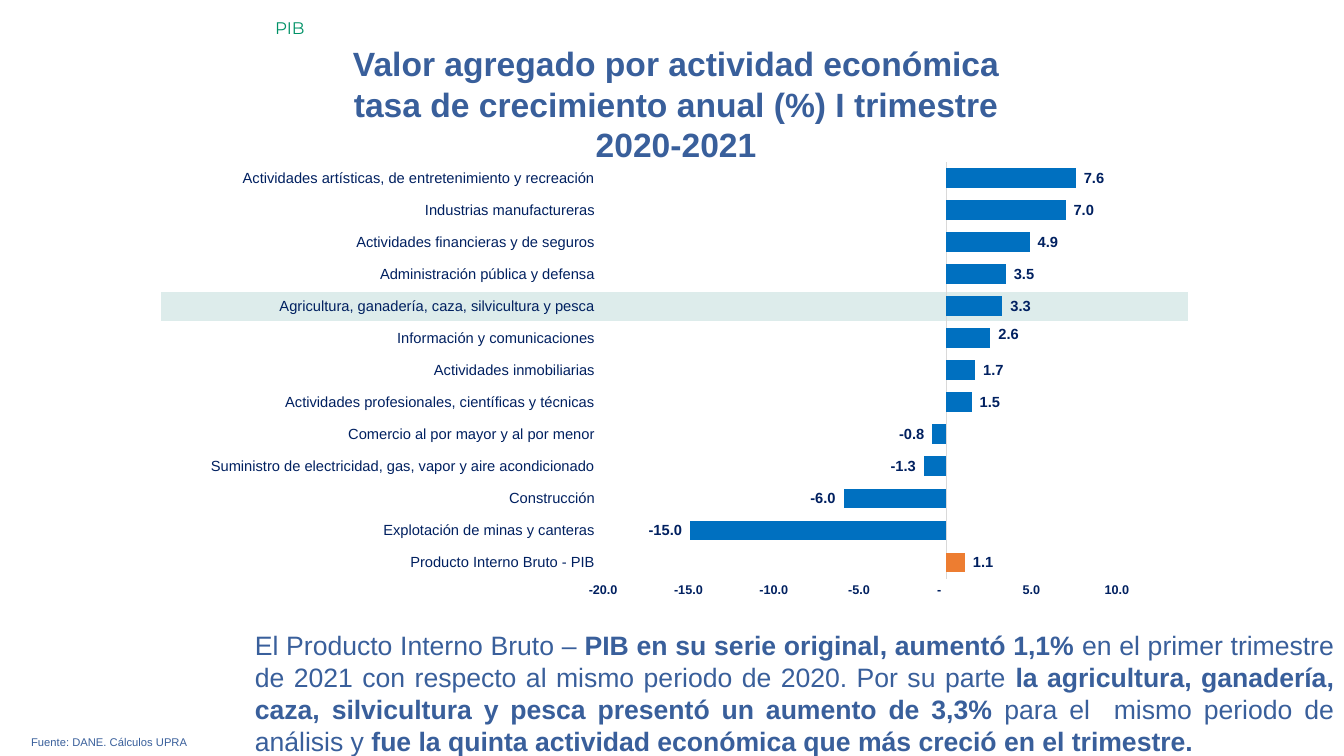
from dataclasses import dataclass
from lxml.etree import SubElement
from pptx import Presentation
from pptx.chart.data import CategoryChartData
from pptx.dml.color import RGBColor
from pptx.enum.chart import XL_CHART_TYPE, XL_LABEL_POSITION, XL_TICK_LABEL_POSITION, XL_TICK_MARK
from pptx.enum.shapes import MSO_SHAPE
from pptx.enum.text import MSO_AUTO_SIZE, PP_ALIGN
from pptx.oxml import parse_xml
from pptx.oxml.ns import nsdecls, qn
from pptx.util import Inches, Pt


@dataclass(frozen=True)
class Theme:
    font: str = "Arial"
    tag_font: str = "Montserrat"
    text: str = "395F9B"
    tag: str = "009267"
    chart_text: str = "002060"
    black: str = "000000"
    bar: str = "0070C0"
    total_bar: str = "ED7D31"
    axis: str = "D9D9D9"
    band: str = "117A76"
    white: str = "FFFFFF"
    title_size: float = 24
    body_size: float = 19
    tag_size: float = 12
    label_size: float = 10.5
    chart_size: float = 10
    axis_size: float = 9
    source_size: float = 8


NUMBER_FORMAT = '_-* #,##0.0_-;\\-* #,##0.0_-;_-* "-"??_-;'

GROWTH = [
    ("Producto Interno Bruto - PIB", 1.1),
    ("Explotación de minas y canteras", -15.0),
    ("Construcción", -6.0),
    ("Suministro de electricidad, gas, vapor y aire acondicionado", -1.3),
    ("Comercio al por mayor y al por menor", -0.8),
    ("Actividades profesionales, científicas y técnicas", 1.5),
    ("Actividades inmobiliarias", 1.7),
    ("Información y comunicaciones", 2.6),
    ("Agricultura, ganadería, caza, silvicultura y pesca", 3.3),
    ("Administración pública y defensa", 3.5),
    ("Actividades financieras y de seguros", 4.9),
    ("Industrias manufactureras", 7.0),
    ("Actividades artísticas, de entretenimiento y recreación", 7.6),
]

TITLE = [
    [("Valor agregado por actividad económica", True)],
    [("tasa de crecimiento anual (%) I trimestre", True)],
    [("2020-2021", True)],
]

SUMMARY = [[
    ("El Producto Interno Bruto – ", False),
    ("PIB en su serie original, aumentó 1,1% ", True),
    ("en el primer trimestre de 2021 con respecto al mismo periodo de 2020. Por su parte ", False),
    ("la agricultura, ganadería, caza, silvicultura y pesca presentó un aumento de 3,3%", True),
    (" para el  mismo periodo de análisis y ", False),
    ("fue la quinta actividad económica que más creció en el trimestre.", True),
]]


class SlideBuilder:
    def __init__(self, slide, theme):
        self.s = slide
        self.theme = theme

    def style(self, font, size, color, bold=False, name=None):
        font.name = name or self.theme.font
        font.size = Pt(size)
        font.bold = bold
        font.color.rgb = RGBColor.from_string(color)

    def text(self, box, paragraphs, size, align, color=None, name=None):
        tf = self.s.shapes.add_textbox(*map(Inches, box)).text_frame
        tf.word_wrap = True
        tf.auto_size = MSO_AUTO_SIZE.SHAPE_TO_FIT_TEXT
        for i, runs in enumerate(paragraphs):
            p = tf.add_paragraph() if i else tf.paragraphs[0]
            p.alignment = align
            for words, bold in runs:
                r = p.add_run()
                r.text = words
                self.style(r.font, size, color or self.theme.text, bold, name)

    def band(self, box, opacity):
        sp = self.s.shapes.add_shape(MSO_SHAPE.RECTANGLE, *map(Inches, box))
        sp.shadow.inherit = False
        sp.fill.solid()
        sp.fill.fore_color.rgb = RGBColor.from_string(self.theme.band)
        color = sp.fill._xPr.find(".//" + qn("a:srgbClr"))
        SubElement(color, qn("a:alpha"), val=str(opacity * 1000))
        sp.line.color.rgb = RGBColor.from_string(self.theme.white)
        sp.line.width = Pt(1)

    def bar_chart(self, box, rows):
        t = self.theme
        data = CategoryChartData(number_format=NUMBER_FORMAT)
        data.categories = [name for name, _ in rows]
        data.add_series("Series 1", [value for _, value in rows])
        chart = self.s.shapes.add_chart(
            XL_CHART_TYPE.BAR_CLUSTERED, *map(Inches, box), data).chart
        chart.has_legend = False
        chart.has_title = False
        self.style(chart.font, t.chart_size, t.black)

        # Axes
        cat, val = chart.category_axis, chart.value_axis
        for axis in (cat, val):
            axis.has_major_gridlines = False
            axis.major_tick_mark = axis.minor_tick_mark = XL_TICK_MARK.NONE
        cat.tick_label_position = XL_TICK_LABEL_POSITION.LOW
        cat.format.line.color.rgb = RGBColor.from_string(t.axis)
        cat.format.line.width = Pt(0.75)
        self.style(cat.tick_labels.font, t.label_size, t.chart_text)
        val.minimum_scale, val.maximum_scale, val.major_unit = -20, 10, 5
        val.format.line.fill.background()
        val.tick_labels.number_format = NUMBER_FORMAT
        val.tick_labels.number_format_is_linked = False
        self.style(val.tick_labels.font, t.axis_size, t.chart_text, True)

        # Bars and value labels
        plot = chart.plots[0]
        plot.gap_width, plot.overlap = 61, 65
        plot.vary_by_categories = False
        series = plot.series[0]
        series.invert_if_negative = False
        for part, color in ((series, t.bar), (series.points[0], t.total_bar)):
            part.format.fill.solid()
            part.format.fill.fore_color.rgb = RGBColor.from_string(color)
        labels = series.data_labels
        labels.show_value = True
        labels.position = XL_LABEL_POSITION.OUTSIDE_END
        labels.number_format = NUMBER_FORMAT
        labels.number_format_is_linked = False
        self.style(labels.font, t.label_size, t.chart_text, True)

        # Plot area
        area = chart._chartSpace.find(".//" + qn("c:plotArea"))
        for old in area.findall(qn("c:layout")):
            area.remove(old)
        area.insert(0, self.layout(
            layoutTarget="inner", xMode="edge", yMode="edge", x=0.43, y=0.02, w=0.53, h=0.92))
        return series

    def layout(self, **settings):
        layout = parse_xml(f"<c:layout {nsdecls('c')}><c:manualLayout/></c:layout>")
        for tag, value in settings.items():
            SubElement(layout[0], qn("c:" + tag), val=str(value))
        return layout

    def nudge_label(self, series, index, x, y):
        label = series.points[index].data_label
        label.position = XL_LABEL_POSITION.OUTSIDE_END
        self.style(label.font, self.theme.label_size, self.theme.chart_text, True)
        idx = series._element.find(".//" + qn("c:dLbl")).find(qn("c:idx"))
        number = parse_xml(f"<c:numFmt {nsdecls('c')}/>")
        number.set("formatCode", NUMBER_FORMAT)
        number.set("sourceLinked", "0")
        idx.addnext(number)
        idx.addnext(self.layout(x=x, y=y))


def main():
    prs = Presentation()
    prs.slide_width, prs.slide_height = Inches(13.33), Inches(7.5)
    theme = Theme()
    slide = SlideBuilder(prs.slides.add_slide(prs.slide_layouts[6]), theme)

    # Title, source and summary
    slide.text((0.45, 0.38, 12.51, 1.31), TITLE, theme.title_size, PP_ALIGN.CENTER)
    slide.text((0.21, 7.25, 12.91, 0.24), [[("Fuente: DANE. Cálculos UPRA", False)]],
               theme.source_size, PP_ALIGN.JUSTIFY)
    slide.text((2.43, 6.19, 10.9, 1.38), SUMMARY, theme.body_size, PP_ALIGN.JUSTIFY)

    # Section tag
    slide.text((2.63, 0.13, 10.7, 0.3), [[("PIB", False)]], theme.tag_size,
               PP_ALIGN.LEFT, theme.tag, theme.tag_font)

    # Growth chart with the agriculture row highlighted
    slide.band((1.59, 2.89, 10.2, 0.3), 14)
    series = slide.bar_chart((1.88, 1.52, 9.58, 4.49), GROWTH)
    slide.nudge_label(series, 7, 0, -0.01)

    prs.save("out.pptx")


if __name__ == "__main__":
    main()
